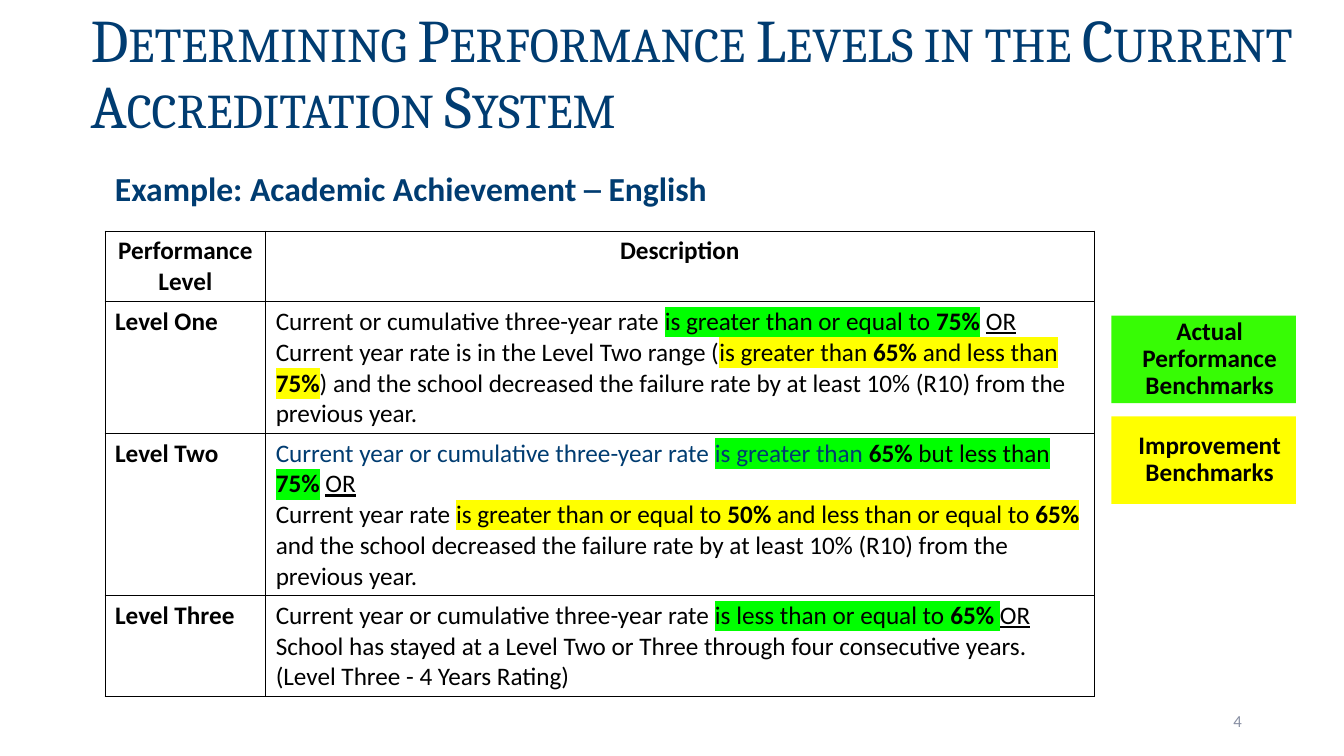
"""Slide on how performance levels are determined in the accreditation system."""
from dataclasses import dataclass

from lxml import etree
from pptx import Presentation
from pptx import util as u
from pptx.dml.color import RGBColor
from pptx.enum import shapes, text
from pptx.oxml import ns


@dataclass(frozen=True)
class Theme:
    heading_font: str = "Cambria"
    body_font: str = "Calibri"
    navy: str = "003C71"
    black: str = "000000"
    white: str = "FFFFFF"
    grey: str = "888FA3"
    legend_green: str = "37FC05"
    green: str = "00FF00"
    yellow: str = "FFFF00"
    title_size: float = 43.2
    subtitle_size: float = 24
    body_size: float = 18
    number_size: float = 12


THEME = Theme()
HIGHLIGHTS = {"g": THEME.green, "y": THEME.yellow}

TITLE = "Determining Performance Levels in the Current Accreditation System"
SUBTITLE = "Example: Academic Achievement ─ English"
PAGE_NUMBER = "4"
HEADERS = ["Performance Level", "Description"]
# Run marks: b bold, u underline, n navy, g green highlight, y yellow highlight
LEVELS = [
    ("Level One", [
        [("Current or cumulative three-year rate ", ""), ("is greater than or equal to ", "g"),
         ("75%", "gb"), (" ", "b"), ("OR", "u")],
        [("Current year rate is in the Level Two range (", ""), ("is greater than ", "y"),
         ("65%", "yb"), (" and less than ", "y"), ("75%", "yb"),
         (") and the school decreased the failure rate by at least 10% (R10) "
          "from the previous year.", "")],
    ]),
    ("Level Two", [
        [("Current year or cumulative three-year rate ", "n"), ("is greater than ", "ng"),
         ("65%", "gb"), (" but less than ", "g"), ("75%", "gb"), (" ", "b"), ("OR", "u")],
        [("Current year rate ", ""), ("is greater than or equal to ", "y"), ("50%", "yb"),
         (" and less than or equal to ", "y"), ("65%", "yb"),
         (" and the school decreased the failure rate by at least 10% (R10) "
          "from the previous year.", "")],
    ]),
    ("Level Three", [
        [("Current year or cumulative three-year rate ", ""), ("is less than or equal to ", "g"),
         ("65%", "gb"), (" ", "g"), ("OR", "u")],
        [("School has stayed at a Level Two or Three through four consecutive years. "
          "(Level Three - 4 Years Rating)", "")],
    ]),
]
LEGEND = [
    ("Actual Performance Benchmarks", THEME.legend_green),
    ("Improvement Benchmarks", THEME.yellow),
]

SLIDE_SIZE = (960, 540)
COLUMN_WIDTHS = (114.8, 591.6)
ROW_HEIGHTS = (50.4, 94, 116, 72)
TABLE_LEFT, TABLE_TOP = 75, 164.9
LEGEND_LEFT, LEGEND_TOP, LEGEND_STEP = 793.8, 225.4, 72
LEGEND_SIZE = (131.8, 62.6)


def style(run, size, color, font=THEME.body_font, bold=False):
    run.font.size, run.font.name, run.font.bold = u.Pt(size), font, bold
    run.font.color.rgb = RGBColor.from_string(color)


def highlight(run, color):
    mark = etree.Element(ns.qn("a:highlight"))
    etree.SubElement(mark, ns.qn("a:srgbClr"), val=color)
    run.font.fill._xPr.find(ns.qn("a:solidFill")).addnext(mark)


def write_runs(paragraph, pieces):
    for words, marks in pieces:
        run = paragraph.add_run()
        run.text = words
        style(run, THEME.body_size, THEME.navy if "n" in marks else THEME.black,
              bold="b" in marks)
        run.font.underline = "u" in marks
        for mark in HIGHLIGHTS.keys() & set(marks):
            highlight(run, HIGHLIGHTS[mark])


def add_label(slide, words, box, anchor, align, **look):
    label = slide.shapes.add_textbox(*map(u.Pt, box))
    frame = label.text_frame
    frame.word_wrap, frame.vertical_anchor = True, anchor
    frame.text = words
    frame.paragraphs[0].alignment = align
    style(frame.paragraphs[0].runs[0], **look)
    return frame


def add_legend_box(slide, words, color, top):
    box = slide.shapes.add_shape(shapes.MSO_SHAPE.RECTANGLE, u.Pt(LEGEND_LEFT), u.Pt(top),
                                 *map(u.Pt, LEGEND_SIZE))
    box.shadow.inherit = False
    box.fill.solid()
    box.fill.fore_color.rgb = RGBColor.from_string(color)
    box.line.fill.background()
    frame = box.text_frame
    frame.word_wrap, frame.vertical_anchor = True, text.MSO_ANCHOR.MIDDLE
    frame.text = words
    line = frame.paragraphs[0]
    line.alignment, line.line_spacing, line.space_before = text.PP_ALIGN.CENTER, 0.9, u.Pt(10)
    line._p.get_or_add_pPr().set("marL", str(u.Pt(8.64)))
    style(line.runs[0], THEME.body_size, THEME.black, bold=True)


def outline(cell):
    cell.fill.solid()
    cell.fill.fore_color.rgb = RGBColor.from_string(THEME.white)
    props = cell._tc.get_or_add_tcPr()
    for index, side in enumerate(("a:lnL", "a:lnR", "a:lnT", "a:lnB")):
        border = etree.Element(ns.qn(side), w=str(u.Pt(0.5)))
        fill = etree.SubElement(border, ns.qn("a:solidFill"))
        etree.SubElement(fill, ns.qn("a:srgbClr"), val=THEME.black)
        props.insert(index, border)


def add_levels_table(slide):
    rows = [[[[(header, "b")]] for header in HEADERS]]
    rows += [[[[(level, "b")]], description] for level, description in LEVELS]
    table = slide.shapes.add_table(
        len(rows), len(HEADERS), u.Pt(TABLE_LEFT), u.Pt(TABLE_TOP),
        u.Pt(sum(COLUMN_WIDTHS)), u.Pt(sum(ROW_HEIGHTS))).table
    table.first_row = table.horz_banding = False
    for column, width in zip(table.columns, COLUMN_WIDTHS):
        column.width = u.Pt(width)
    for r, (row, height) in enumerate(zip(rows, ROW_HEIGHTS)):
        table.rows[r].height = u.Pt(height)
        for c, paragraphs in enumerate(row):
            cell = table.cell(r, c)
            outline(cell)
            frame = cell.text_frame
            for p, pieces in enumerate(paragraphs):
                line = frame.add_paragraph() if p else frame.paragraphs[0]
                line.alignment = text.PP_ALIGN.LEFT if r else text.PP_ALIGN.CENTER
                write_runs(line, pieces)


def main():
    deck = Presentation()
    deck.slide_width, deck.slide_height = map(u.Pt, SLIDE_SIZE)
    slide = deck.slides.add_slide(deck.slide_layouts[6])

    title = add_label(slide, TITLE, (0, 0, 960, 104.4), text.MSO_ANCHOR.BOTTOM,
                      text.PP_ALIGN.LEFT, size=THEME.title_size, color=THEME.navy,
                      font=THEME.heading_font)
    title.margin_left = u.Pt(64.8)
    title.paragraphs[0].line_spacing = 0.9
    title.paragraphs[0].runs[0].font._element.set("cap", "small")

    add_label(slide, PAGE_NUMBER, (678.2, 500.4, 216, 28.8), text.MSO_ANCHOR.MIDDLE,
              text.PP_ALIGN.RIGHT, size=THEME.number_size, color=THEME.grey)
    add_levels_table(slide)
    add_label(slide, SUBTITLE, (TABLE_LEFT, 116.6, 509, 36), text.MSO_ANCHOR.TOP,
              text.PP_ALIGN.LEFT, size=THEME.subtitle_size, color=THEME.navy, bold=True)
    for i, (words, color) in enumerate(LEGEND):
        add_legend_box(slide, words, color, LEGEND_TOP + i * LEGEND_STEP)

    deck.save("out.pptx")


if __name__ == "__main__":
    main()
